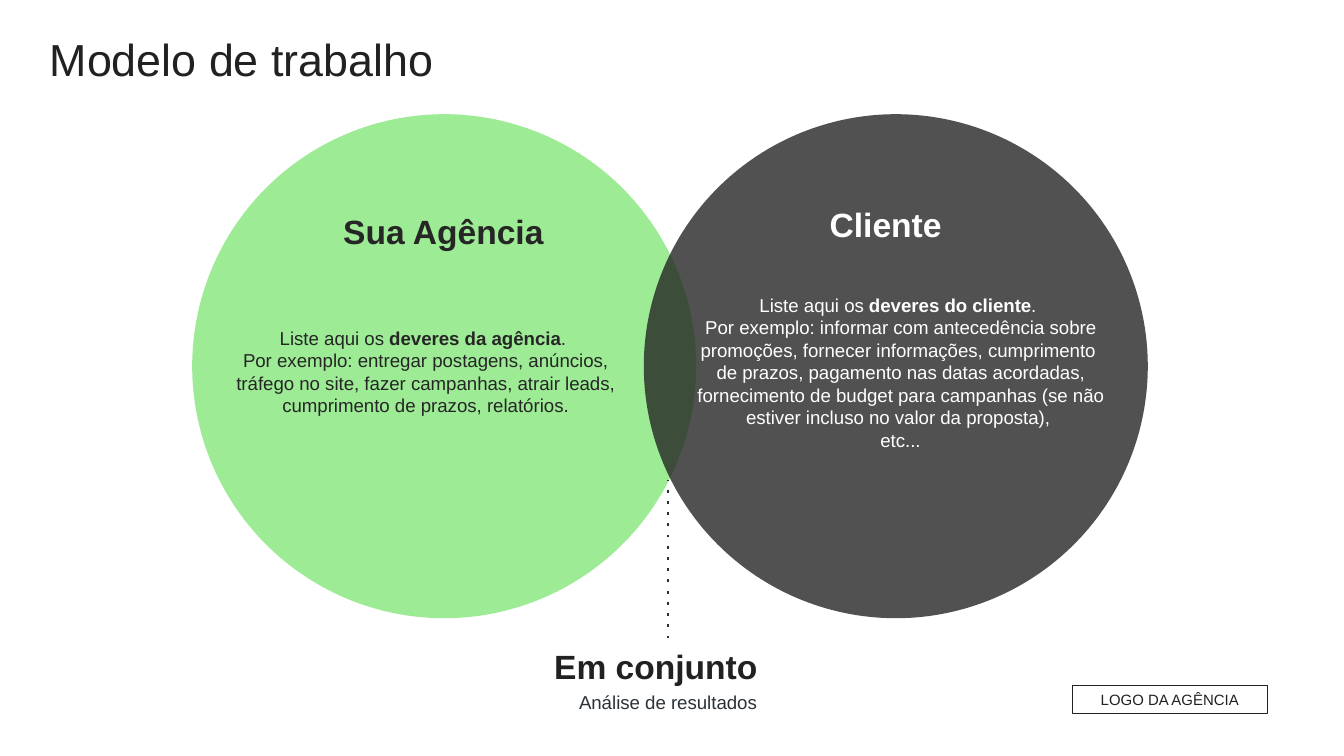
from pptx import Presentation
from pptx.dml.color import RGBColor
from pptx.enum.dml import MSO_LINE
from pptx.enum.shapes import MSO_CONNECTOR, MSO_SHAPE
from pptx.enum.text import MSO_ANCHOR, PP_ALIGN
from pptx.oxml.ns import qn
from pptx.util import Inches, Pt
from lxml import etree

OVAL, RECT = MSO_SHAPE.OVAL, MSO_SHAPE.RECTANGLE
LINE, DOT = MSO_CONNECTOR.STRAIGHT, MSO_LINE.ROUND_DOT
TOP, MID = MSO_ANCHOR.TOP, MSO_ANCHOR.MIDDLE
LEFT, CENTER = PP_ALIGN.LEFT, PP_ALIGN.CENTER

THEME = {
    "font": "Arial", "green": "82E678", "dark": "212121", "ink": "262626",
    "slate": "2A3137", "white": "FFFFFF", "alpha": 78,
    "title": 24, "head": 18, "body": 10, "logo": 8,
}

WIDTH = Inches(10)
HEIGHT = WIDTH * 9 // 16
CIRCLES = [("green", 1.43), ("dark", 4.79)]
SIZE, CROWN = 3.75, 0.85
STEM = (4.97, 4.75, 4.97, 3.57)

AGENCY = [
    ["Liste aqui os ", ("deveres da agência",), ". "],
    ["Por exemplo: entregar postagens, anúncios, tráfego no site, fazer "
     "campanhas, atrair leads, cumprimento de prazos, relatórios."],
]
CLIENT = [
    ["Liste aqui os ", ("deveres do cliente",), ". "],
    ["Por exemplo: informar com antecedência sobre promoções, fornecer "
     "informações, cumprimento "],
    ["de prazos, pagamento nas datas acordadas, fornecimento de budget para "
     "campanhas (se não estiver incluso no valor da proposta), "],
    ["etc..."],
]
TEXTS = [
    ((1.73, 1.52, 3.14, 0.4), [[("Sua Agência",)]], "head", "ink", TOP),
    ((5.19, 1.47, 2.8, 0.4), [[("Cliente",)]], "head", "white", TOP),
    ((1.54, 2.09, 3.25, 1.35), AGENCY, "body", "ink", MID),
    ((4.99, 2.03, 3.42, 1.48), CLIENT, "body", "white", MID),
    ((3.92, 4.76, 1.92, 0.4), [[("Em conjunto",)]], "head", "dark", TOP),
    ((4.02, 5.09, 1.9, 0.34), [["Análise de resultados"]], "body", "slate", TOP),
]
TITLE = ((0.37, 0.23, 3.12, 0.45), [["Modelo de trabalho"]])
LOGO = ((7.98, 5.1, 1.45, 0.21), [["LOGO DA AGÊNCIA"]])


def paint(name):
    return RGBColor.from_string(THEME[name])


def place(box):
    return [Inches(n) for n in box]


def apply(item, values):
    for key, value in values.items():
        setattr(item, key, value)


def write(shape, lines, size, color, anchor, align=CENTER, pad=(0.1, 0.05), space=None):
    frame = shape.text_frame
    side, edge = place(pad)
    apply(frame, {"word_wrap": True, "vertical_anchor": anchor,
                  "margin_left": side, "margin_right": side,
                  "margin_top": edge, "margin_bottom": edge})
    for i, line in enumerate(lines):
        para = frame.add_paragraph() if i else frame.paragraphs[0]
        apply(para, {"alignment": align, "line_spacing": space})
        for part in line:
            bold = isinstance(part, tuple)
            run = para.add_run()
            run.text = part[0] if bold else part
            apply(run.font, {"name": THEME["font"], "size": Pt(THEME[size]), "bold": bold})
            run.font.color.rgb = paint(color)


def circle(slide, color, left):
    disc = slide.shapes.add_shape(OVAL, *place((left, CROWN, SIZE, SIZE)))
    disc.shadow.inherit = False
    disc.fill.solid()
    disc.fill.fore_color.rgb = paint(color)
    disc.line.fill.background()
    tint = disc._element.spPr.find(qn("a:solidFill"))[0]
    etree.SubElement(tint, qn("a:alpha")).set("val", str(THEME["alpha"] * 1000))


def stem(slide):
    link = slide.shapes.add_connector(LINE, *place(STEM))
    link.line.color.rgb = paint("slate")
    apply(link.line, {"width": Pt(1.5), "dash_style": DOT})
    props = link._element.spPr
    props.find(qn("a:ln")).find(qn("a:prstDash")).set("val", "dot")
    etree.SubElement(props, qn("a:effectLst"))


def main():
    deck = Presentation()
    apply(deck, {"slide_width": WIDTH, "slide_height": HEIGHT})
    slide = deck.slides.add_slide(deck.slide_layouts[6])
    for color, left in CIRCLES:
        circle(slide, color, left)
    stem(slide)
    for box, lines, size, color, anchor in TEXTS:
        write(slide.shapes.add_textbox(*place(box)), lines, size, color, anchor)
    box, lines = TITLE
    write(slide.shapes.add_textbox(*place(box)), lines, "title", "dark", MID,
          LEFT, (0, 0), 0.93)
    box, lines = LOGO
    badge = slide.shapes.add_shape(RECT, *place(box))
    badge.shadow.inherit = False
    badge.fill.background()
    badge.line.color.rgb = paint("dark")
    badge.line.width = Pt(0.75)
    write(badge, lines, "logo", "dark", MID)
    deck.save("out.pptx")


if __name__ == "__main__":
    main()
